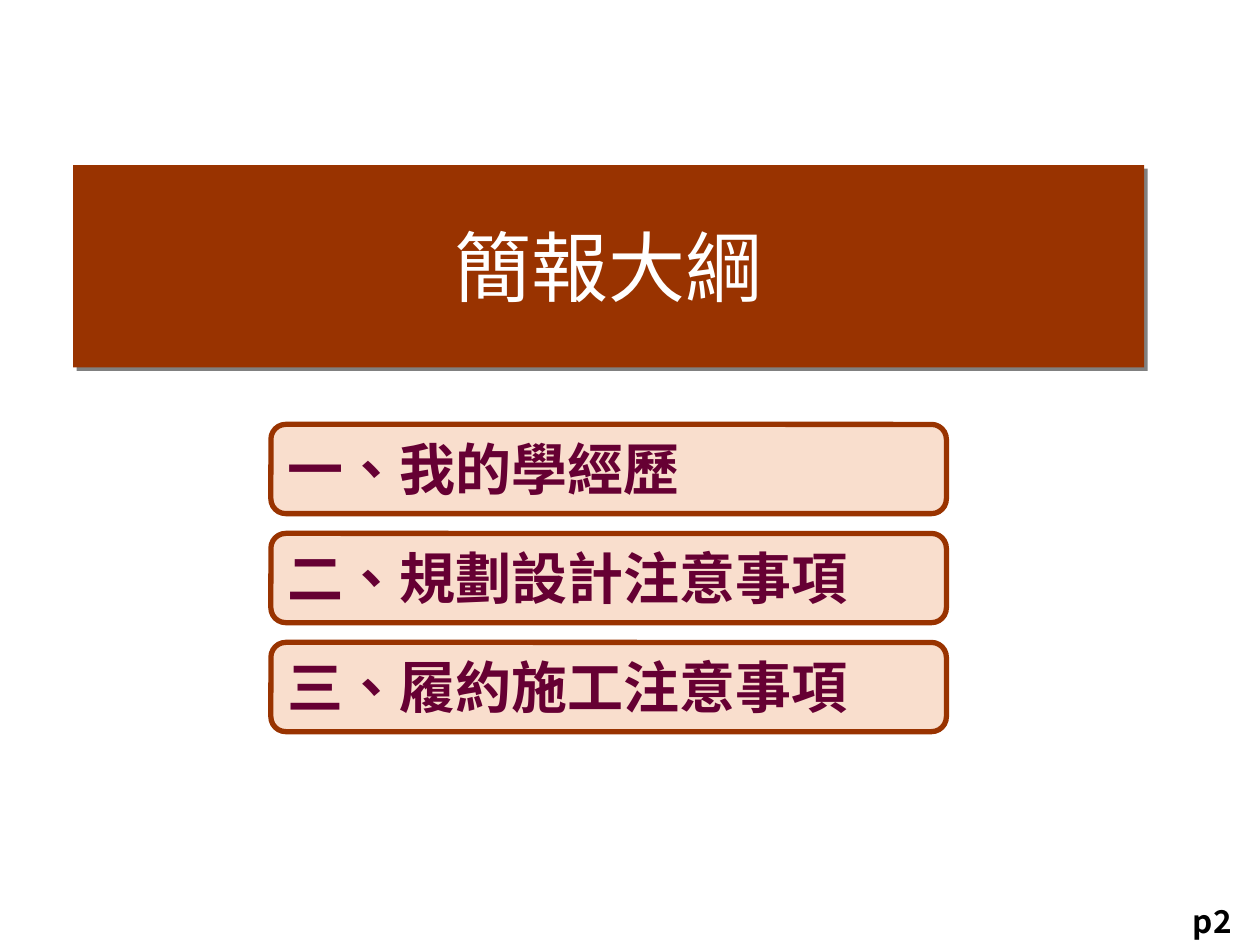
import pptx
import pptx.dml.color
import pptx.enum.lang
import pptx.enum.shapes
import pptx.enum.text
import pptx.oxml
import pptx.oxml.ns
import pptx.util
from lxml import etree

Pt = pptx.util.Pt
RGBColor = pptx.dml.color.RGBColor
PP_ALIGN = pptx.enum.text.PP_ALIGN
MSO_ANCHOR = pptx.enum.text.MSO_ANCHOR

BROWN = RGBColor(0x99, 0x33, 0x00)
PEACH = RGBColor(0xF9, 0xDE, 0xCD)
PLUM = RGBColor(0x66, 0x00, 0x33)
WHITE = RGBColor(0xFF, 0xFF, 0xFF)
BLACK = RGBColor(0x00, 0x00, 0x00)
CJK_FONT = "Noto Sans CJK SC"

ITEMS = ["一、我的學經歷", "二、規劃設計注意事項", "三、履約施工注意事項"]
ITEM_LEFT, ITEM_TOP, ITEM_WIDTH, ITEM_HEIGHT = 154.8, 242.5, 386, 51
ITEM_PITCH = 62.3

SHADOW_XML = (
    f'<a:effectLst {pptx.oxml.ns.nsdecls("a")}>'
    '<a:outerShdw dist="35921" dir="2700000" algn="ctr" rotWithShape="0">'
    '<a:srgbClr val="808080"/></a:outerShdw></a:effectLst>'
)


def write_text(shape, text, size, color, font_name, bold, alignment):
    text_frame = shape.text_frame
    text_frame.text = text
    paragraph = text_frame.paragraphs[0]
    paragraph.alignment = alignment
    run = paragraph.runs[0]
    run.font.size = Pt(size)
    run.font.bold = bold
    run.font.color.rgb = color
    run.font.name = font_name
    run.font.language_id = pptx.enum.lang.MSO_LANGUAGE_ID.TRADITIONAL_CHINESE
    properties = run._r.get_or_add_rPr()
    etree.SubElement(properties, pptx.oxml.ns.qn("a:ea"), typeface=CJK_FONT)


def format_title(title):
    title.left, title.top = Pt(41.8), Pt(94.3)
    title.width, title.height = Pt(612), Pt(115.6)
    title.fill.solid()
    title.fill.fore_color.rgb = BROWN
    title.line.fill.background()
    title._element.spPr.append(pptx.oxml.parse_xml(SHADOW_XML))
    title.text_frame.vertical_anchor = MSO_ANCHOR.MIDDLE
    write_text(title, "簡報大綱", 44, WHITE, CJK_FONT, False, PP_ALIGN.CENTER)


def add_item(slide, text, top):
    shape = slide.shapes.add_shape(
        pptx.enum.shapes.MSO_SHAPE.ROUNDED_RECTANGLE,
        Pt(ITEM_LEFT), Pt(top), Pt(ITEM_WIDTH), Pt(ITEM_HEIGHT),
    )
    shape.shadow.inherit = False
    shape.fill.solid()
    shape.fill.fore_color.rgb = PEACH
    shape.line.color.rgb = BROWN
    shape.line.width = Pt(3)
    shape.text_frame.word_wrap = True
    shape.text_frame.vertical_anchor = MSO_ANCHOR.TOP
    write_text(shape, text, 32, PLUM, "Arial", True, PP_ALIGN.LEFT)


def add_page_label(slide, text):
    label = slide.shapes.add_textbox(Pt(674.6), Pt(512), Pt(50), Pt(29))
    label.text_frame.word_wrap = False
    write_text(label, text, 18, BLACK, CJK_FONT, True, PP_ALIGN.LEFT)


def main():
    presentation = pptx.Presentation()
    presentation.slide_width, presentation.slide_height = Pt(720), Pt(540)
    slide = presentation.slides.add_slide(presentation.slide_layouts[5])
    format_title(slide.shapes.title)
    for index, text in enumerate(ITEMS):
        add_item(slide, text, ITEM_TOP + index * ITEM_PITCH)
    add_page_label(slide, "p2")
    presentation.save("out.pptx")


if __name__ == "__main__":
    main()
